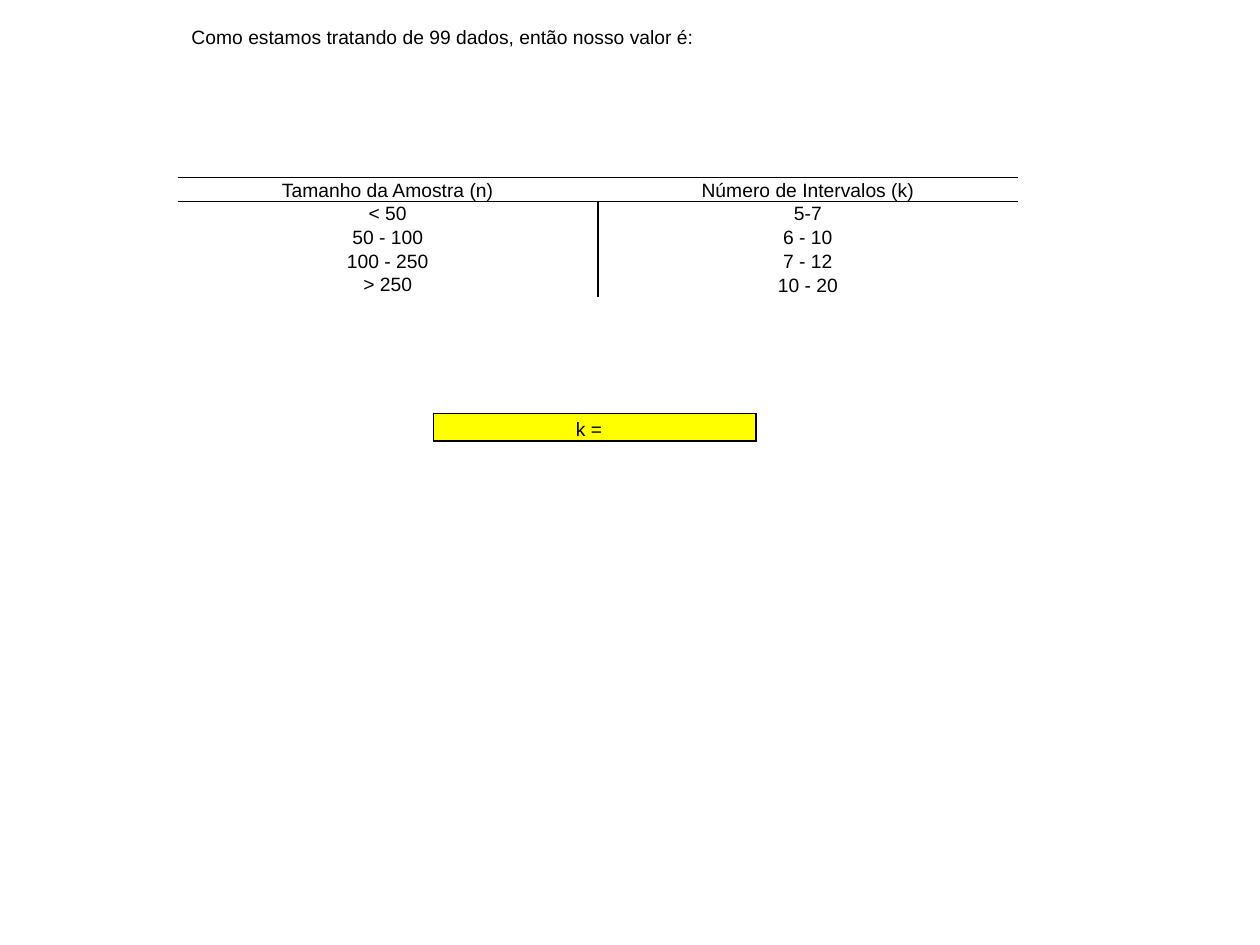
"""Build the slide that looks up the number of class intervals for a sample size."""
from dataclasses import dataclass

from lxml.etree import SubElement
from pptx import Presentation
from pptx.dml.color import RGBColor
from pptx.enum.text import MSO_ANCHOR as Anchor, PP_ALIGN as Align
from pptx.oxml.ns import qn
from pptx.slide import Slide
from pptx.table import Table, _Cell as Cell
from pptx.text.text import _Paragraph as Paragraph
from pptx.util import Inches, Pt


@dataclass(frozen=True)
class Theme:
    font: str = "Arial"
    size: float = 11
    border: float = 1
    ink: str = "000000"
    highlight: str = "FFFF00"


@dataclass(frozen=True)
class CellStyle:
    text: str
    spacing: float
    sides: str = ""
    anchor: Anchor = Anchor.TOP
    fill: str | None = None
    right_margin: float = 0.07


THEME = Theme()
SIDES = "LRTB"


def add_text(paragraph: Paragraph, text: str) -> None:
    run = paragraph.add_run()
    run.text = text
    run.font.name = THEME.font
    run.font.size = Pt(THEME.size)
    run.font.color.rgb = RGBColor.from_string(THEME.ink)


def set_borders(cell: Cell, sides: str) -> None:
    properties = cell._tc.get_or_add_tcPr()
    for index, side in enumerate(SIDES):
        line = SubElement(properties, qn(f"a:ln{side}"), w=str(Pt(THEME.border)))
        if side in sides:
            solid = SubElement(line, qn("a:solidFill"))
            SubElement(solid, qn("a:srgbClr"), val=THEME.ink)
        else:
            SubElement(line, qn("a:noFill"))
        properties.insert(index, line)


def style_cell(cell: Cell, style: CellStyle) -> None:
    cell.margin_left = Inches(0.07)
    cell.margin_right = Inches(style.right_margin)
    cell.margin_top = cell.margin_bottom = Inches(0)
    cell.vertical_anchor = style.anchor
    if style.fill:
        cell.fill.solid()
        cell.fill.fore_color.rgb = RGBColor.from_string(style.fill)
    else:
        cell.fill.background()
    set_borders(cell, style.sides)
    paragraph = cell.text_frame.paragraphs[0]
    paragraph.alignment = Align.CENTER
    paragraph.line_spacing = Pt(style.spacing)
    add_text(paragraph, style.text)


def add_table(slide: Slide, left: float, top: float, width: float,
              row_height: float, rows: list[list[CellStyle]]) -> Table:
    table = slide.shapes.add_table(
        len(rows), len(rows[0]), Inches(left), Inches(top),
        Inches(width), Inches(row_height * len(rows))).table
    table.first_row = table.horz_banding = False
    for row, styles in zip(table.rows, rows):
        row.height = Inches(row_height)
        for cell, style in zip(row.cells, styles):
            style_cell(cell, style)
    return table


def add_statement(slide: Slide, text: str) -> None:
    frame = slide.shapes.add_textbox(
        Inches(0), Inches(0), Inches(10), Inches(0.5)).text_frame
    frame.word_wrap = True
    frame.margin_left, frame.margin_top = Inches(1.52), Inches(0.22)
    frame.margin_right = frame.margin_bottom = Inches(0)
    add_text(frame.paragraphs[0], text)


def interval_rows() -> list[list[CellStyle]]:
    headings = ("Tamanho da Amostra (n)", "Número de Intervalos (k)")
    ranges = (("< 50", 13, "5-7", 13), ("50 - 100", 13, "6 - 10", 12.8),
              ("100 - 250", 13, "7 - 12", 12.5), ("> 250", 12.5, "10 - 20", 12.5))
    rows = [[CellStyle(heading, 13.4, "TB") for heading in headings]]
    for index, (sample, sample_spacing, intervals, interval_spacing) in enumerate(ranges):
        top = "T" if index == 0 else ""
        rows.append([CellStyle(sample, sample_spacing, "R" + top),
                     CellStyle(intervals, interval_spacing, "L" + top, Anchor.MIDDLE)])
    return rows


def main() -> None:
    presentation = Presentation()
    presentation.slide_width, presentation.slide_height = Inches(10), Inches(7.5)
    slide = presentation.slides.add_slide(presentation.slide_layouts[6])
    add_table(slide, 1.41, 1.41, 6.67, 0.19, interval_rows())
    answer = CellStyle("k =", 15.8, SIDES, fill=THEME.highlight, right_margin=0.16)
    add_table(slide, 3.44, 3.28, 2.56, 0.22, [[answer]])
    add_statement(slide, "Como estamos tratando de 99 dados, então nosso valor é:")
    presentation.save("out.pptx")


if __name__ == "__main__":
    main()
